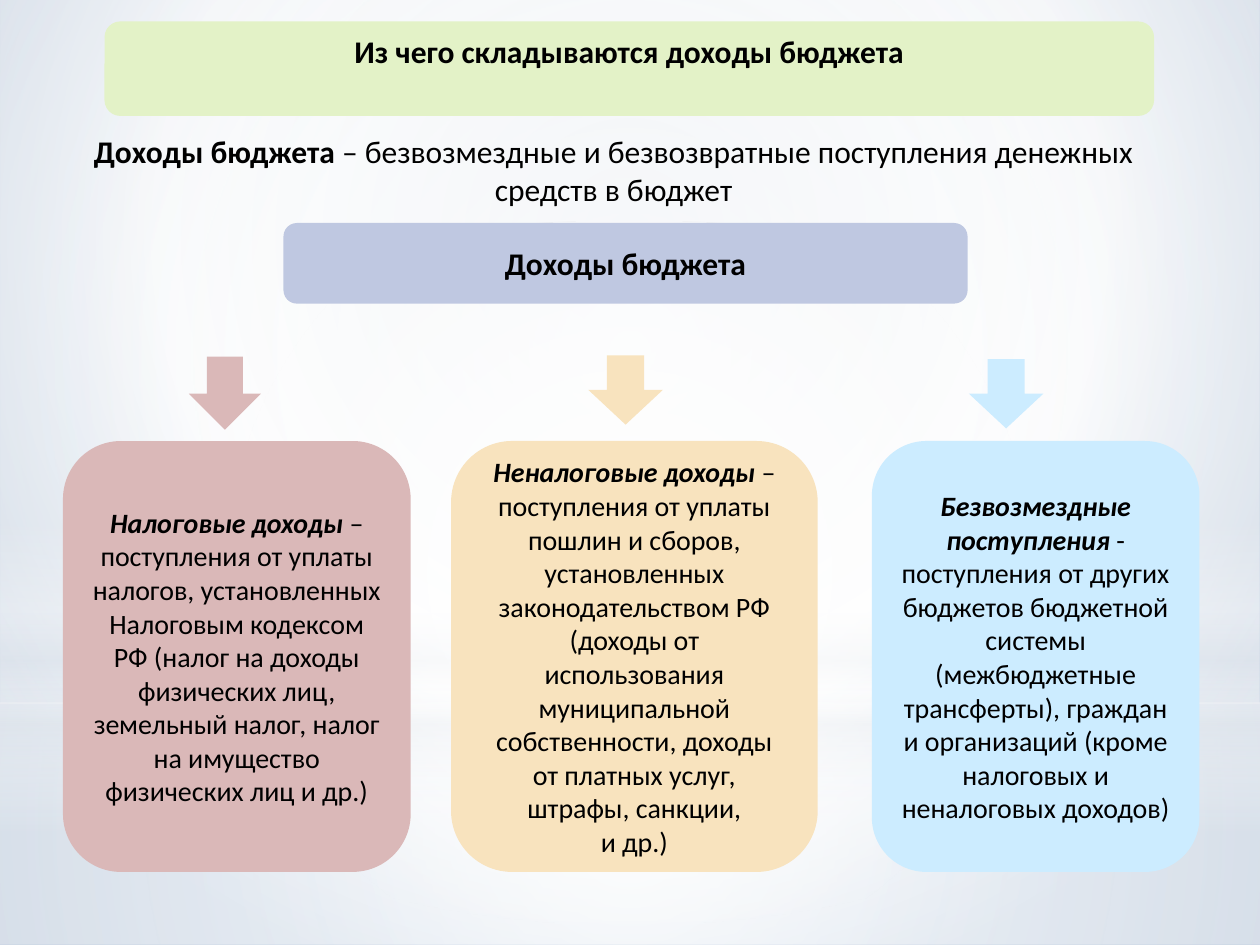
from dataclasses import dataclass

from lxml import etree
from pptx import Presentation
from pptx.dml.color import RGBColor
from pptx.enum.shapes import MSO_SHAPE
from pptx.enum.text import MSO_ANCHOR, MSO_AUTO_SIZE, PP_ALIGN
from pptx.oxml.ns import qn
from pptx.util import Inches, Pt

RECT, OVAL = MSO_SHAPE.RECTANGLE, MSO_SHAPE.OVAL
ROUND, DOWN = MSO_SHAPE.ROUNDED_RECTANGLE, MSO_SHAPE.DOWN_ARROW
TOP, MIDDLE = MSO_ANCHOR.TOP, MSO_ANCHOR.MIDDLE
CENTER = PP_ALIGN.CENTER
GROW = MSO_AUTO_SIZE.SHAPE_TO_FIT_TEXT


@dataclass(frozen=True)
class Theme:
    font: str = "Calibri"
    ink: str = "000000"
    head: int = 18
    body: int = 16
    green: str = "E3F2C7"
    blue: str = "BFC8E1"
    rose: str = "DAB8B8"
    sand: str = "F8E3BE"
    sky: str = "CCECFF"
    white: str = "FFFFFF"
    mist: str = "E4E9EF"
    steel: str = "D7DFE8"
    slate: str = "A3B9D4"


THEME = Theme()
MID = (50, 50, 50, 50)

# Gradient stops: position, colour, opacity (percent)
BASE = [(0, THEME.steel, 100), (60, THEME.white, 100), (100, THEME.slate, 100)]
GLOWS = [
    (RECT, (0, 5.58, 10, 1.92), MID,
     [(0, THEME.white, 91), (37, THEME.white, 76), (100, THEME.mist, 79)]),
    (RECT, (0, 0, 10, 5.58), MID,
     [(0, THEME.white, 89), (48, THEME.white, 62), (100, THEME.mist, 79)]),
    (RECT, (0, 4.12, 10, 2.5), None,
     [(0, THEME.white, 0), (29, THEME.white, 30), (45, THEME.mist, 40),
      (55, THEME.white, 26), (65, THEME.mist, 60), (100, THEME.white, 0)]),
    (OVAL, (0, 1.75, 10, 5.58), MID,
     [(0, THEME.white, 100), (56, THEME.white, 0)]),
]

# Colour, arrow place, card left and width, term, paragraphs of the definition
CARDS = [
    (THEME.rose, (1.5, 2.83, 0.57, 0.58), 0.5, 2.76, "Налоговые доходы ",
     ["– поступления от уплаты налогов, установленных Налоговым кодексом РФ "
      "(налог на доходы физических лиц, земельный налог, налог на имущество "
      "физических лиц и др.)"]),
    (THEME.sand, (4.67, 2.82, 0.59, 0.55), 3.58, 2.91, "Неналоговые доходы ",
     ["– поступления от уплаты пошлин и сборов, установленных "
      "законодательством РФ (доходы от использования муниципальной "
      "собственности, доходы от платных услуг, штрафы, санкции,",
      "и др.)"]),
    (THEME.sky, (7.69, 2.85, 0.59, 0.55), 6.92, 2.6,
     "Безвозмездные поступления ",
     ["- поступления от других бюджетов бюджетной системы (межбюджетные "
      "трансферты), граждан и организаций (кроме налоговых и неналоговых "
      "доходов)"]),
]


def grade(old, stops, focus):
    """Swap a solid fill element for a gradient; no focus means top to bottom."""
    grad = etree.Element(qn("a:gradFill"), rotWithShape="1")
    row = etree.SubElement(grad, qn("a:gsLst"))
    for pos, color, alpha in stops:
        stop = etree.SubElement(row, qn("a:gs"), pos=str(pos * 1000))
        tint = etree.SubElement(stop, qn("a:srgbClr"), val=color)
        if alpha < 100:
            etree.SubElement(tint, qn("a:alpha"), val=str(alpha * 1000))
    if focus:
        way = etree.SubElement(grad, qn("a:path"), path="circle")
        sides = {k: str(v * 1000) for k, v in zip("ltrb", focus)}
        etree.SubElement(way, qn("a:fillToRect"), **sides)
    else:
        etree.SubElement(grad, qn("a:lin"), ang="5400000", scaled="0")
    old.getparent().replace(old, grad)


def add_shape(slide, kind, place, color):
    shape = slide.shapes.add_shape(kind, *map(Inches, place))
    shape.shadow.inherit = False
    shape.fill.solid()
    shape.fill.fore_color.rgb = RGBColor.from_string(color)
    shape.line.fill.background()
    return shape


def add_glow(slide, kind, place, focus, stops):
    shape = add_shape(slide, kind, place, THEME.white)
    grade(shape.element.spPr.find(qn("a:solidFill")), stops, focus)


def write(shape, size, term, texts=(), slant=None, anchor=MIDDLE):
    """Bold term first, then plain paragraphs, all centred."""
    frame = shape.text_frame
    frame.word_wrap = True
    frame.vertical_anchor = anchor
    para = frame.paragraphs[0]
    run = para.add_run()
    run.text = term
    run.font.bold, run.font.italic = True, slant
    for i, text in enumerate(texts):
        if i:
            para = frame.add_paragraph()
        para.add_run().text = text
    for para in frame.paragraphs:
        para.alignment = CENTER
        para.font.name = THEME.font
        para.font.size = Pt(size)
        para.font.color.rgb = RGBColor.from_string(THEME.ink)


def add_back(slide):
    fill = slide.background.fill
    fill.solid()
    fill.fore_color.rgb = RGBColor.from_string(THEME.white)
    back = slide.element.find(".//" + qn("p:bgPr"))
    grade(back.find(qn("a:solidFill")), BASE, (20, 10, 20, 60))
    for glow in GLOWS:
        add_glow(slide, *glow)


def main():
    deck = Presentation()
    deck.slide_width, deck.slide_height = Inches(10), Inches(7.5)
    slide = deck.slides.add_slide(deck.slide_layouts[6])
    add_back(slide)

    # Title
    title = add_shape(slide, ROUND, (0.83, 0.17, 8.33, 0.75), THEME.green)
    write(title, THEME.head, "Из чего складываются доходы бюджета", anchor=TOP)

    # Definition
    place = map(Inches, (0.33, 1, 9.08, 0.71))
    lead = slide.shapes.add_textbox(*place)
    write(lead, THEME.head, "Доходы бюджета ",
          ["– безвозмездные и безвозвратные поступления денежных средств "
           "в бюджет"], anchor=TOP)
    lead.text_frame.auto_size = GROW

    # Root of the scheme
    root = add_shape(slide, ROUND, (2.25, 1.77, 5.43, 0.64), THEME.blue)
    write(root, THEME.head, "Доходы бюджета")

    # Kinds of income
    for color, arrow, left, width, term, texts in CARDS:
        add_shape(slide, DOWN, arrow, color)
        card = add_shape(slide, ROUND, (left, 3.5, width, 3.42), color)
        write(card, THEME.body, term, texts, slant=True)

    deck.save("out.pptx")


if __name__ == "__main__":
    main()
